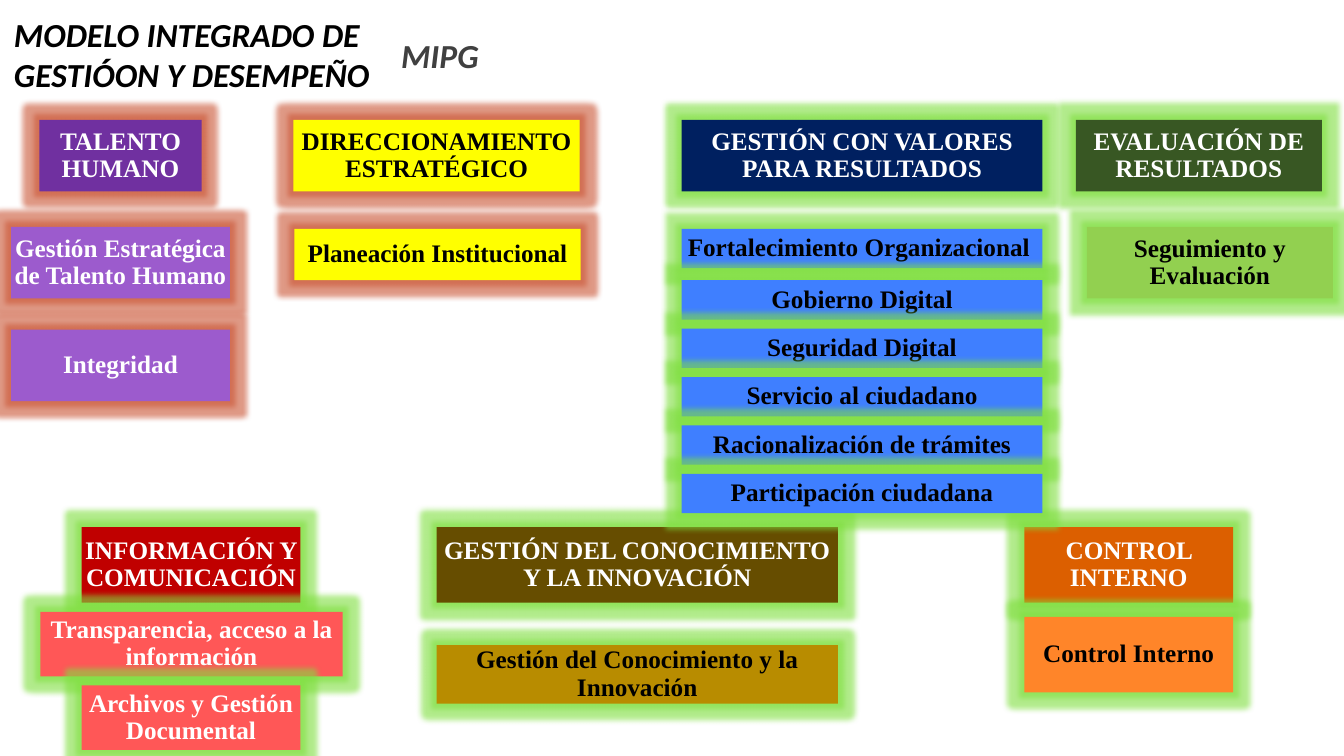
import pptx
import pptx.dml.color
import pptx.enum.shapes
import pptx.enum.text
import pptx.oxml
import pptx.oxml.ns
import pptx.util
from pptx.util import Inches

COLORS = {
    "black": "000000", "white": "FFFFFF", "gray": "404040",
    "purple": "7030A0", "lilac": "9C5BCD", "yellow": "FFFF00",
    "navy": "002060", "blue": "3F7FFF", "forest": "385723", "lime": "92D050",
    "red": "C00000", "coral": "FF5757", "brown": "664D00", "ochre": "B88C00",
    "rust": "DC5F00", "orange": "FF8529",
    "red glow": "CB5535", "green glow": "80E040",
}

# Text, left, top, width, height, fill, text colour, glow
DIMENSIONS = [
    ("TALENTO HUMANO", 0.39, 1.19, 1.61, 0.71, "purple", "white", "red glow"),
    ("DIRECCIONAMIENTO ESTRATÉGICO", 2.91, 1.19, 2.84, 0.71, "yellow", "black", "red glow"),
    ("GESTIÓN CON VALORES PARA RESULTADOS", 6.76, 1.19, 3.58, 0.71, "navy", "white", "green glow"),
    ("EVALUACIÓN DE RESULTADOS", 10.67, 1.19, 2.44, 0.71, "forest", "white", "green glow"),
    ("INFORMACIÓN Y COMUNICACIÓN", 0.81, 5.23, 2.17, 0.75, "red", "white", "green glow"),
    ("GESTIÓN DEL CONOCIMIENTO Y LA INNOVACIÓN", 4.33, 5.23, 3.98, 0.75, "brown", "white", "green glow"),
    ("CONTROL INTERNO", 10.16, 5.23, 2.07, 0.75, "rust", "white", "green glow"),
]
POLICIES = [
    ("Gestión Estratégica de Talento Humano", 0.11, 2.25, 2.17, 0.71, "lilac", "white", "red glow"),
    ("Integridad", 0.11, 3.27, 2.17, 0.71, "lilac", "white", "red glow"),
    ("Planeación Institucional", 2.92, 2.27, 2.84, 0.51, "yellow", "black", "red glow"),
    ("Fortalecimiento Organizacional ", 6.76, 2.27, 3.58, 0.39, "blue", "black", "green glow"),
    ("Seguimiento y Evaluación", 10.78, 2.25, 2.44, 0.71, "lime", "black", "green glow"),
    ("Transparencia, acceso a la información", 0.4, 6.07, 3, 0.64, "coral", "white", "green glow"),
    ("Archivos y Gestión Documental", 0.81, 6.8, 2.17, 0.64, "coral", "white", "green glow"),
    ("Gestión del Conocimiento y la Innovación", 4.33, 6.4, 3.98, 0.58, "ochre", "black", "green glow"),
    ("Control Interno", 10.16, 6.12, 2.07, 0.75, "orange", "black", "green glow"),
]
RESULT_POLICIES = [
    "Gobierno Digital", "Seguridad Digital", "Servicio al ciudadano",
    "Racionalización de trámites", "Participación ciudadana",
]
RESULT_TOP, RESULT_STEP = 2.78, 0.48


def rgb(name):
    return pptx.dml.color.RGBColor.from_string(COLORS[name])


def style_text(paragraph, font_name, size, color, italic=False):
    for run in paragraph.runs:
        run.font.name = font_name
        run.font.size = pptx.util.Pt(size)
        run.font.bold = True
        run.font.italic = italic
        run.font.color.rgb = rgb(color)


def add_glow(box, color):
    box.shadow.inherit = False
    effects = box._element.spPr.find(pptx.oxml.ns.qn("a:effectLst"))
    effects.append(pptx.oxml.parse_xml(
        f'<a:glow {pptx.oxml.ns.nsdecls("a")} rad="{pptx.util.Pt(8)}">'
        f'<a:srgbClr val="{COLORS[color]}"><a:alpha val="60000"/></a:srgbClr></a:glow>'))


def add_box(slide, text, left, top, width, height, fill, color, glow):
    box = slide.shapes.add_shape(
        pptx.enum.shapes.MSO_SHAPE.RECTANGLE,
        Inches(left), Inches(top), Inches(width), Inches(height))
    box.fill.solid()
    box.fill.fore_color.rgb = rgb(fill)
    box.line.fill.background()
    add_glow(box, glow)
    frame = box.text_frame
    frame.word_wrap = True
    frame.vertical_anchor = pptx.enum.text.MSO_ANCHOR.MIDDLE
    frame.margin_left = frame.margin_right = Inches(0.02)
    frame.margin_top = frame.margin_bottom = Inches(0.02)
    frame.text = text
    label = frame.paragraphs[0]
    label.alignment = pptx.enum.text.PP_ALIGN.CENTER
    label.line_spacing = 0.9
    style_text(label, "Times New Roman", 18, color)


def add_heading(slide, text, left, top, width, height, color):
    heading = slide.shapes.add_textbox(
        Inches(left), Inches(top), Inches(width), Inches(height))
    frame = heading.text_frame
    frame.word_wrap = True
    frame.auto_size = pptx.enum.text.MSO_AUTO_SIZE.SHAPE_TO_FIT_TEXT
    frame.text = text
    style_text(frame.paragraphs[0], "Calibri", 24, color, italic=True)


def main():
    deck = pptx.Presentation()
    deck.slide_width, deck.slide_height = Inches(13.33), Inches(7.5)
    slide = deck.slides.add_slide(deck.slide_layouts[6])

    # Headings
    add_heading(slide, "MODELO INTEGRADO DE GESTIÓON Y DESEMPEÑO",
                0.04, 0.09, 3.78, 0.91, "black")
    add_heading(slide, "MIPG", 3.88, 0.3, 1.44, 0.5, "gray")

    # Dimensions and their policies
    for box in DIMENSIONS + POLICIES:
        add_box(slide, *box)

    # Remaining policies of management for results, evenly stacked
    for row, policy in enumerate(RESULT_POLICIES):
        add_box(slide, policy, 6.76, RESULT_TOP + row * RESULT_STEP, 3.58, 0.39,
                "blue", "black", "green glow")

    deck.save("out.pptx")


if __name__ == "__main__":
    main()
